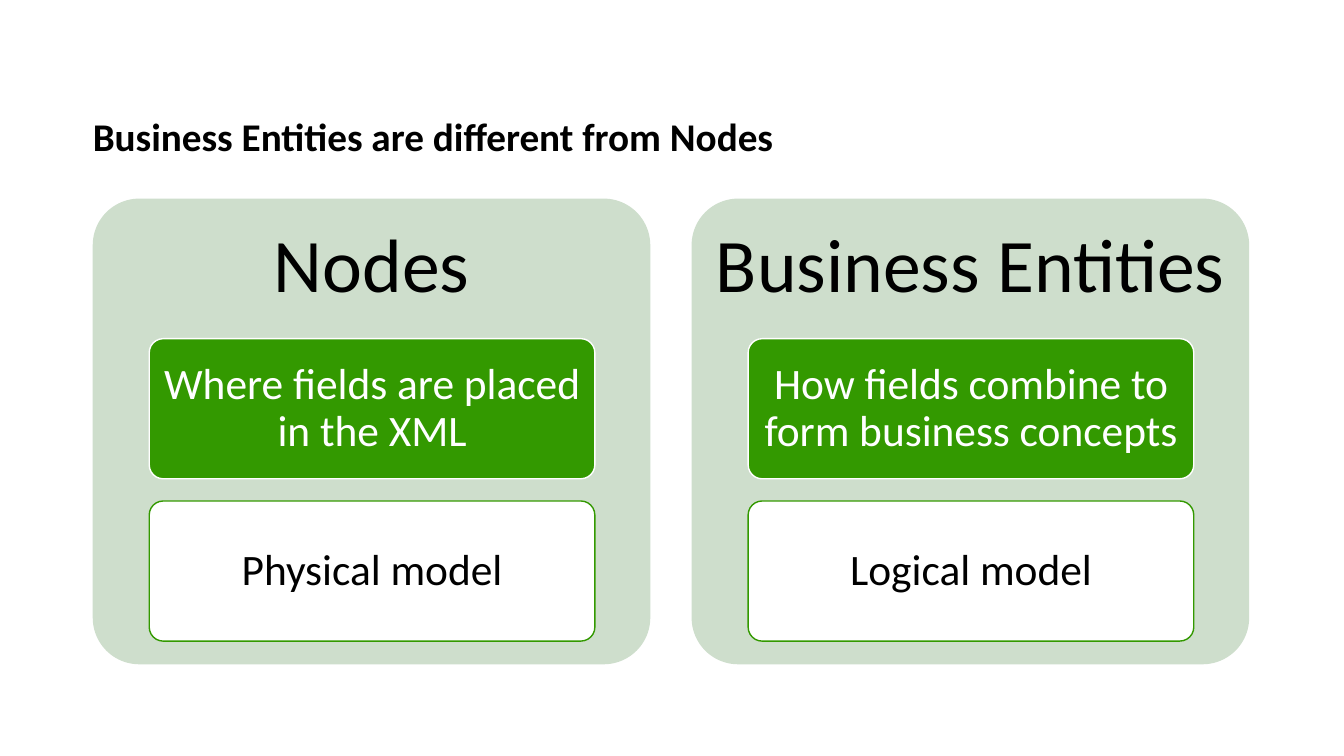
from pptx import Presentation
from pptx.dml.color import RGBColor
from pptx.enum.shapes import MSO_SHAPE
from pptx.enum.text import MSO_ANCHOR, MSO_AUTO_SIZE, PP_ALIGN
from pptx.util import Inches, Pt

BLACK = RGBColor(0x00, 0x00, 0x00)
WHITE = RGBColor(0xFF, 0xFF, 0xFF)
GREEN = RGBColor(0x33, 0x99, 0x00)
PALE_GREEN = RGBColor(0xCE, 0xDE, 0xCC)

FONT = "Calibri"
PANEL_LEFT, PANEL_TOP = 0.92, 1.97
PANEL_WIDTH, PANEL_HEIGHT = 5.53, 4.62
PANEL_STEP = 5.94
HEADING_HEIGHT = 1.38
CARD_WIDTH, CARD_HEIGHT = 4.42, 1.39
CARD_TOP, CARD_STEP = 3.36, 1.61
CARD_INDENT = 0.56

PANELS = [
    ("Nodes", "Where fields are placed in the XML", "Physical model"),
    ("Business Entities", "How fields combine to form business concepts", "Logical model"),
]


def write_text(shape, text, size, color, insets, anchor=MSO_ANCHOR.MIDDLE,
               alignment=PP_ALIGN.CENTER, bold=False):
    text_frame = shape.text_frame
    text_frame.text = text
    text_frame.word_wrap = True
    text_frame.auto_size = MSO_AUTO_SIZE.NONE
    text_frame.vertical_anchor = anchor
    left, top, right, bottom = insets
    text_frame.margin_left = Inches(left)
    text_frame.margin_top = Inches(top)
    text_frame.margin_right = Inches(right)
    text_frame.margin_bottom = Inches(bottom)
    paragraph = text_frame.paragraphs[0]
    paragraph.alignment = alignment
    paragraph.line_spacing = 0.9
    font = paragraph.runs[0].font
    font.name = FONT
    font.size = Pt(size)
    font.bold = bold
    font.color.rgb = color


def add_title(slide, text):
    title = slide.shapes.title
    title.left, title.top = Inches(PANEL_LEFT), Inches(0.14)
    title.width, title.height = Inches(11.48), Inches(1.45)
    write_text(title, text, 28, BLACK, (0, 0.05, 0, 0),
               MSO_ANCHOR.BOTTOM, PP_ALIGN.LEFT, True)


def add_rounded_box(slide, left, top, width, height, fill, line=None):
    box = slide.shapes.add_shape(MSO_SHAPE.ROUNDED_RECTANGLE, Inches(left),
                                 Inches(top), Inches(width), Inches(height))
    box.adjustments[0] = 0.1
    box.shadow.inherit = False
    box.fill.solid()
    box.fill.fore_color.rgb = fill
    if line is None:
        box.line.fill.background()
    else:
        box.line.color.rgb = line
        box.line.width = Pt(1)
    return box


def add_panel(slide, left, heading, description, model):
    add_rounded_box(slide, left, PANEL_TOP, PANEL_WIDTH, PANEL_HEIGHT, PALE_GREEN)
    heading_box = slide.shapes.add_textbox(Inches(left), Inches(PANEL_TOP),
                                           Inches(PANEL_WIDTH), Inches(HEADING_HEIGHT))
    write_text(heading_box, heading, 54, BLACK, (0.23, 0.23, 0.23, 0.23))
    cards = [(description, GREEN, WHITE, WHITE), (model, WHITE, GREEN, BLACK)]
    for row, (text, fill, line, color) in enumerate(cards):
        card = add_rounded_box(slide, left + CARD_INDENT, CARD_TOP + row * CARD_STEP,
                               CARD_WIDTH, CARD_HEIGHT, fill, line)
        write_text(card, text, 31, color, (0.09, 0.06, 0.09, 0.06))


def main():
    presentation = Presentation()
    presentation.slide_width = Inches(13.33)
    presentation.slide_height = Inches(7.5)
    slide = presentation.slides.add_slide(presentation.slide_layouts[5])
    add_title(slide, "Business Entities are different from Nodes")
    for column, panel in enumerate(PANELS):
        add_panel(slide, PANEL_LEFT + column * PANEL_STEP, *panel)
    presentation.save("out.pptx")


if __name__ == "__main__":
    main()
